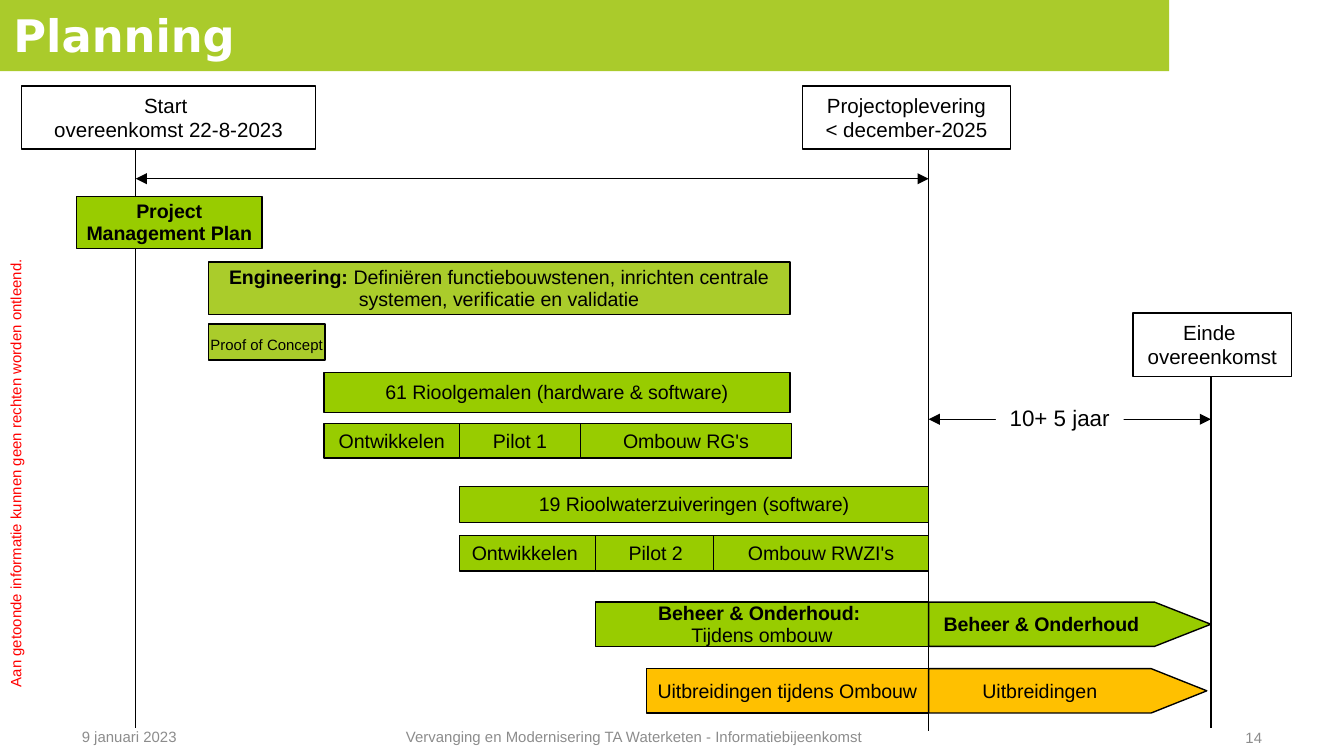
from dataclasses import dataclass

from lxml import etree
from pptx import Presentation
from pptx.dml.color import RGBColor
from pptx.enum.shapes import MSO_CONNECTOR, MSO_SHAPE
from pptx.enum.text import MSO_ANCHOR, MSO_AUTO_SIZE, PP_ALIGN
from pptx.oxml.ns import qn
from pptx.util import Inches, Pt

RECTANGLE = MSO_SHAPE.RECTANGLE
OFFPAGE = MSO_SHAPE.FLOWCHART_OFFPAGE_CONNECTOR
STRAIGHT = MSO_CONNECTOR.STRAIGHT
LEFT, CENTER, RIGHT = PP_ALIGN.LEFT, PP_ALIGN.CENTER, PP_ALIGN.RIGHT
TOP, MIDDLE = MSO_ANCHOR.TOP, MSO_ANCHOR.MIDDLE
FIXED = MSO_AUTO_SIZE.NONE
TITLE_ONLY = 5
COLUMNS, ROWS = 100, 56.25


@dataclass(frozen=True)
class Theme:
    banner: str = "AACB2B"
    design: str = "AACC2B"
    build: str = "98CC00"
    extension: str = "FFC000"
    paper: str = "FFFFFF"
    ink: str = "000000"
    muted: str = "8C8C8C"
    warning: str = "FF0000"
    body_font: str = "Arial"
    title_font: str = "DejaVu Sans"
    title_size: float = 24
    span_size: float = 12
    milestone_size: float = 11
    bar_size: float = 10.5
    small_size: float = 8
    leading: float = 12
    stroke: float = 0.75


@dataclass(frozen=True)
class Box:
    column: float
    row: float
    columns: float
    rows: float

    def turned(self) -> "Box":
        shift = (self.columns - self.rows) / 2
        return Box(self.column + shift, self.row - shift, self.rows, self.columns)


@dataclass(frozen=True)
class Bar:
    text: str
    box: Box
    fill: str
    size: float
    arrow: bool = False


@dataclass(frozen=True)
class Line:
    start: tuple[float, float]
    end: tuple[float, float]
    arrows: bool = False


THEME = Theme()
START, DELIVERY, END = 10.1, 69.1, 90.1
DESIGN, RG, RWZI, UPKEEP, EXTRA = 15.5, 24.1, 34.2, 44.3, 48.1
PILOT_ROW, REBUILD_ROW = 31.5, 39.85
MILESTONE_ROWS = 4.7


def bar(text: str, column: float, row: float, end: float, rows: float,
        fill: str = THEME.build, size: float = THEME.bar_size, arrow: bool = False) -> Bar:
    return Bar(text, Box(column, row, end - column, rows), fill, size, arrow)


BARS = [
    bar("*Project*\n*Management Plan*", 5.7, 14.6, 19.5, 3.9),
    bar("*Engineering: *Definiëren functiebouwstenen, inrichten centrale systemen, "
        "verificatie en validatie", DESIGN, 19.5, 58.8, 3.9, THEME.design),
    bar("Proof of Concept", DESIGN, 24.1, 24.2, 2.7, THEME.design, THEME.small_size),
    bar("61 Rioolgemalen (hardware & software)", RG, 27.7, 58.8, 3),
    bar("Ontwikkelen", RG, PILOT_ROW, RWZI, 2.6),
    bar("Pilot 1", RWZI, PILOT_ROW, 43.2, 2.6),
    bar("Ombouw RG's", 43.2, PILOT_ROW, 58.9, 2.6),
    bar("19 Rioolwaterzuiveringen (software)", RWZI, 36.2, DELIVERY, 2.7),
    bar("Ontwikkelen ", RWZI, REBUILD_ROW, UPKEEP, 2.65),
    bar("Pilot 2", UPKEEP, REBUILD_ROW, 53.3, 2.65),
    bar("Ombouw RWZI's", 53.1, REBUILD_ROW, DELIVERY, 2.65),
    bar("*Beheer & Onderhoud: *\nTijdens ombouw", UPKEEP, 44.8, DELIVERY, 3.3),
    bar("Uitbreidingen tijdens Ombouw", EXTRA, 49.75, DELIVERY, 3.3, THEME.extension),
    bar("*Beheer & Onderhoud*", DELIVERY, 44.8, END, 3.3, arrow=True),
    bar("Uitbreidingen", DELIVERY, 49.75, 89.8, 3.3, THEME.extension, arrow=True),
]

LINES = [
    Line((START, 11.1), (START, 14.6)),
    Line((START, 18.5), (START, 54.2)),
    Line((DELIVERY, 11.1), (DELIVERY, 54.4)),
    Line((END, 27.1), (END, 54.2)),
    Line((START, 13.3), (DELIVERY, 13.3), arrows=True),
    Line((DELIVERY, 31.2), (END, 31.2), arrows=True),
]

MILESTONES = [
    ("Start \novereenkomst 22-8-2023", Box(1.6, 6.4, 21.9, MILESTONE_ROWS)),
    ("Projectoplevering\n< december-2025", Box(59.7, 6.4, 15.5, MILESTONE_ROWS)),
    ("Einde \novereenkomst", Box(84.3, 23.3, 11.8, MILESTONE_ROWS)),
]

FOOTERS = [
    ("9 januari 2023", Box(5.1, 53.7, 16.5, 2.2), LEFT),
    ("Vervanging en Modernisering TA Waterketen - Informatiebijeenkomst",
     Box(22.4, 53.7, 49.6, 2.2), CENTER),
    ("14", Box(89.6, 53.8, 5.3, 2.2), RIGHT),
]

deck = Presentation()
deck.slide_width = Inches(10)
deck.slide_height = deck.slide_width * 9 // 16
slide = deck.slides.add_slide(deck.slide_layouts[TITLE_ONLY])


def across(columns: float) -> int:
    return round(deck.slide_width * columns / COLUMNS)


def down(rows: float) -> int:
    return round(deck.slide_height * rows / ROWS)


def place(box: Box) -> tuple[int, int, int, int]:
    return across(box.column), down(box.row), across(box.columns), down(box.rows)


def write(shape, text: str, *, size: float, color: str = THEME.ink,
          font: str = THEME.body_font, align=CENTER, anchor=TOP, wrap: bool = True,
          leading: float | None = None, inset: float | None = None) -> None:
    frame = shape.text_frame
    frame.auto_size, frame.word_wrap, frame.vertical_anchor = FIXED, wrap, anchor
    if inset is not None:
        frame.margin_left = frame.margin_right = Inches(inset)
        frame.margin_top = frame.margin_bottom = Inches(inset)
    for index, line in enumerate(text.split("\n")):
        paragraph = frame.add_paragraph() if index else frame.paragraphs[0]
        paragraph.alignment = align
        if leading:
            paragraph.line_spacing = Pt(leading)
        for part, words in enumerate(line.split("*")):
            if words:
                run = paragraph.add_run()
                run.text = words
                run.font.name, run.font.size = font, Pt(size)
                run.font.bold = part % 2 == 1
                run.font.color.rgb = RGBColor.from_string(color)


def draw_shape(box: Box, fill: str, kind=RECTANGLE, outlined: bool = True):
    shape = slide.shapes.add_shape(kind, *place(box))
    shape.shadow.inherit = False
    shape.fill.solid()
    shape.fill.fore_color.rgb = RGBColor.from_string(fill)
    if outlined:
        shape.line.color.rgb = RGBColor.from_string(THEME.ink)
        shape.line.width = Pt(THEME.stroke)
    else:
        shape.line.fill.background()
    return shape


def draw_bar(item: Bar) -> None:
    if item.arrow:
        shape = draw_shape(item.box.turned(), item.fill, OFFPAGE)
        shape.rotation = 270
        shape.text_frame._txBody.bodyPr.set("vert", "vert")
    else:
        shape = draw_shape(item.box, item.fill)
    write(shape, item.text, size=item.size, anchor=MIDDLE, leading=THEME.leading, inset=0)


def draw_line(item: Line) -> None:
    (x1, y1), (x2, y2) = item.start, item.end
    connector = slide.shapes.add_connector(STRAIGHT, across(x1), down(y1), across(x2), down(y2))
    connector.line.color.rgb = RGBColor.from_string(THEME.ink)
    connector.line.width = Pt(THEME.stroke)
    if item.arrows:
        for end in ("a:headEnd", "a:tailEnd"):
            etree.SubElement(connector.line._get_or_add_ln(), qn(end), type="triangle")
    etree.SubElement(connector._element.spPr, qn("a:effectLst"))


def draw_title(text: str) -> None:
    title = slide.shapes.title
    title.left, title.top, title.width, title.height = place(Box(0, -0.1, 87, 5.4))
    title.fill.solid()
    title.fill.fore_color.rgb = RGBColor.from_string(THEME.banner)
    write(title, f"*{text}*", size=THEME.title_size, color=THEME.paper,
          font=THEME.title_font, align=LEFT, anchor=MIDDLE)


def main() -> None:
    draw_title("Planning")
    disclaimer = slide.shapes.add_textbox(*place(Box(0, 18.2, 2.4, 34).turned()))
    disclaimer.rotation = 270
    write(disclaimer, "Aan getoonde informatie kunnen geen rechten worden ontleend.",
          size=THEME.small_size, color=THEME.warning, wrap=False)
    for text, box, align in FOOTERS:
        write(slide.shapes.add_textbox(*place(box)), text, size=THEME.small_size,
              color=THEME.muted, align=align, anchor=MIDDLE)
    for item in BARS:
        draw_bar(item)
    for item in LINES:
        draw_line(item)
    duration = draw_shape(Box(74.1, 29.6, 9.5, 3), THEME.paper, outlined=False)
    write(duration, "10+ 5 jaar", size=THEME.span_size, wrap=False)
    for text, box in MILESTONES:
        write(draw_shape(box, THEME.paper), text, size=THEME.milestone_size, wrap=False)
    deck.save("out.pptx")


if __name__ == "__main__":
    main()
